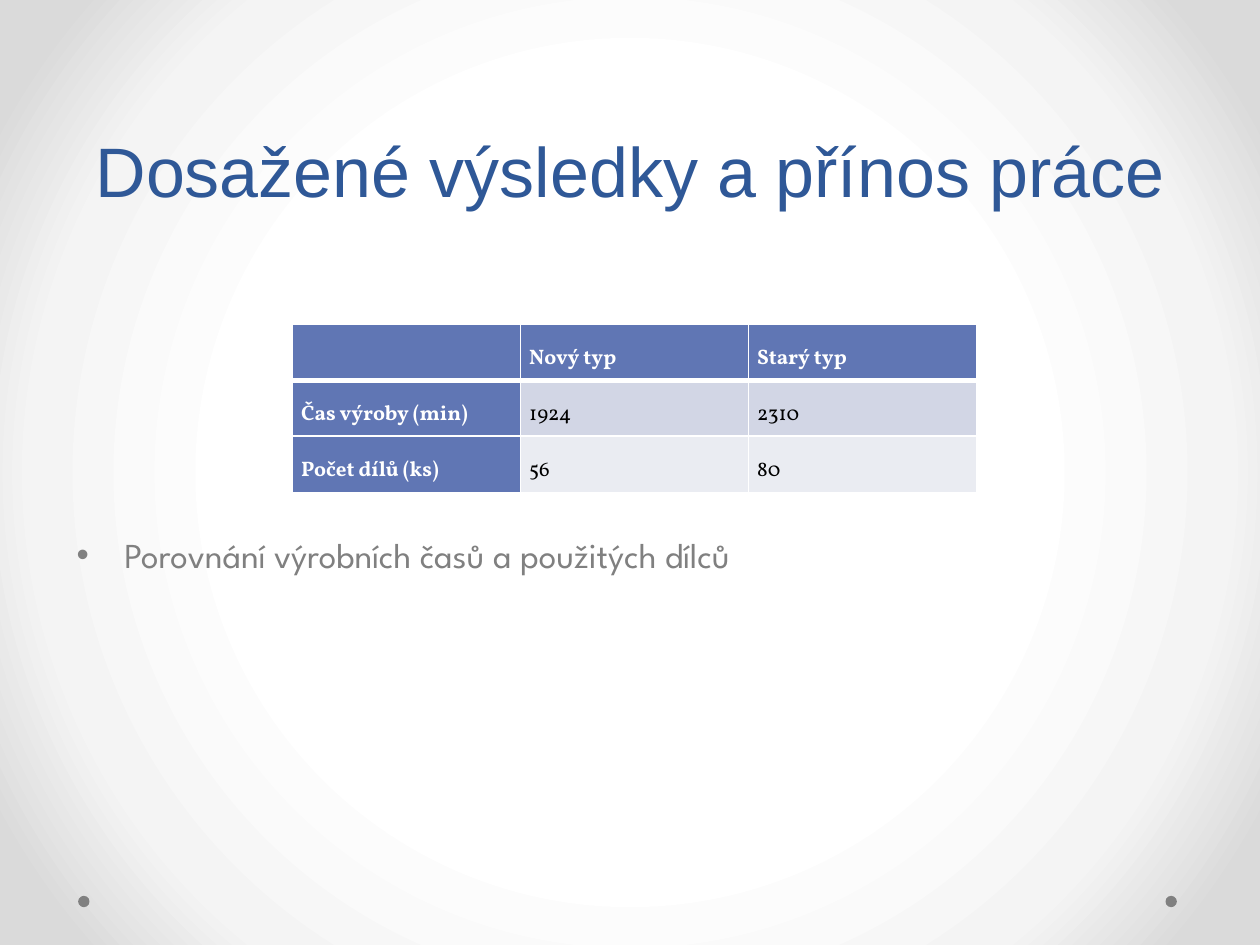
from dataclasses import dataclass

from lxml import etree
from pptx import Presentation
from pptx.dml.color import RGBColor
from pptx.enum.shapes import MSO_SHAPE
from pptx.enum.text import MSO_ANCHOR, PP_ALIGN
from pptx.oxml import parse_xml
from pptx.oxml.ns import nsdecls, qn
from pptx.util import Inches, Pt

ELLIPSE = MSO_SHAPE.OVAL
TOP, MIDDLE, BOTTOM = MSO_ANCHOR.TOP, MSO_ANCHOR.MIDDLE, MSO_ANCHOR.BOTTOM
LEFT, CENTER, JUSTIFY = PP_ALIGN.LEFT, PP_ALIGN.CENTER, PP_ALIGN.JUSTIFY
WIDTH, HEIGHT = 10, 7.5


@dataclass(frozen=True)
class Theme:
    """Colours, fonts and type sizes of the slide."""
    title: str = "2F5897"
    accent: str = "6076B4"
    bands: tuple = ("D2D6E5", "EAECF2")
    white: str = "FFFFFF"
    black: str = "000000"
    grey: str = "808080"
    backdrop: tuple = ((50, "FFFFFF"), (76, "F4F4F4"), (92, "DADADA"))
    title_font: str = "Arial"
    body_font: str = "League Spartan"
    table_font: str = "Vollkorn"
    title_size: int = 40
    body_size: int = 20
    table_size: int = 12


THEME = Theme()
ROWS = (
    ("", "Nový typ", "Starý typ"),
    ("Čas výroby (min)", "1924", "2310"),
    ("Počet dílů (ks)", "56", "80"),
)


def share(left, top, width, height):
    """Turn shares of the slide into a box of lengths."""
    return (Inches(left * WIDTH), Inches(top * HEIGHT),
            Inches(width * WIDTH), Inches(height * HEIGHT))


def write(para, text, *, font, size, color, bold=False, align=LEFT, spacing=None):
    """Put formatted text into a paragraph."""
    para.alignment = align
    para.line_spacing = spacing
    span = para.add_run()
    span.text = text
    span.font.name, span.font.size, span.font.bold = font, Pt(size), bold
    span.font.color.rgb = RGBColor.from_string(color)


def paint_backdrop(page):
    """Fill the page with a gradient that spreads from its centre."""
    page.background.fill.gradient()
    gradient = next(page.element.iter(qn("a:gradFill")))
    for child in list(gradient):
        gradient.remove(child)
    stops = etree.SubElement(gradient, qn("a:gsLst"))
    for position, color in THEME.backdrop:
        stop = etree.SubElement(stops, qn("a:gs"), pos=str(position * 1000))
        etree.SubElement(stop, qn("a:srgbClr"), val=color)
    circle = etree.SubElement(gradient, qn("a:path"), path="circle")
    etree.SubElement(circle, qn("a:fillToRect"),
                     {side: "50000" for side in "ltrb"})


def place_dots(page, box):
    """Put a round dot at each end of the box."""
    left, top, width, size = box
    for start in (left, left + width - size):
        dot = page.shapes.add_shape(ELLIPSE, start, top, size, size)
        dot.shadow.inherit = False
        dot.fill.solid()
        dot.fill.fore_color.rgb = RGBColor.from_string(THEME.grey)
        dot.line.fill.background()


def place_title(page, box):
    """Place the title at the bottom of its box."""
    title = page.shapes.title
    title.left, title.top, title.width, title.height = box
    frame = title.text_frame
    frame.word_wrap = True
    frame.vertical_anchor = BOTTOM
    frame.margin_bottom = Inches(0.07)
    write(frame.paragraphs[0], "Dosažené výsledky a přínos práce",
          font=THEME.title_font, size=THEME.title_size, color=THEME.title,
          align=CENTER, spacing=Pt(58))


def set_borders(cell, widths):
    """Draw white borders, with widths in points for left, right, top, bottom."""
    properties = cell._tc.get_or_add_tcPr()
    for side, width in zip("LRTB", widths):
        properties.append(parse_xml(
            f'<a:ln{side} {nsdecls("a")} w="{Pt(width)}"><a:solidFill>'
            f'<a:srgbClr val="{THEME.white}"/></a:solidFill></a:ln{side}>'))


def place_table(page, box):
    """Place the comparison table with equal columns and rows."""
    count = len(ROWS)
    table = page.shapes.add_table(count, len(ROWS[0]), *box).table
    table.horz_banding = False
    for r, texts in enumerate(ROWS):
        table.rows[r].height = box[3] // count
        for c, text in enumerate(texts):
            cell = table.cell(r, c)
            heading = r == 0 or c == 0
            set_borders(cell, (1, 1, 3 if r == 1 else 1, 3 if r == 0 else 1))
            cell.fill.solid()
            cell.fill.fore_color.rgb = RGBColor.from_string(
                THEME.accent if heading else THEME.bands[r - 1])
            cell.vertical_anchor = MIDDLE
            cell.margin_left = cell.margin_right = Inches(0.07)
            cell.margin_top = cell.margin_bottom = 0
            if text:
                write(cell.text_frame.paragraphs[0], text, font=THEME.table_font,
                      size=THEME.table_size, bold=heading, align=JUSTIFY,
                      color=THEME.white if heading else THEME.black, spacing=1.5)


def place_body(page, box):
    """Place the bulleted remark below the room kept for the table."""
    frame = page.shapes.add_textbox(*box).text_frame
    frame.word_wrap = True
    frame.vertical_anchor = TOP
    frame.margin_top = Inches(1.83)
    para = frame.paragraphs[0]
    properties = para._p.get_or_add_pPr()
    indent = Inches(0.38)
    properties.set("marL", str(indent))
    properties.set("indent", str(-indent))
    etree.SubElement(properties, qn("a:buFont"), typeface=THEME.title_font)
    etree.SubElement(properties, qn("a:buChar"), char="•")
    write(para, "Porovnání výrobních časů a použitých dílců",
          font=THEME.body_font, size=THEME.body_size, color=THEME.grey)


def main():
    """Build and save the slide."""
    deck = Presentation()
    deck.slide_width, deck.slide_height = Inches(WIDTH), Inches(HEIGHT)
    page = deck.slides.add_slide(deck.slide_layouts[5])
    paint_backdrop(page)
    place_dots(page, share(0.062, 0.948, 0.872, 0.012))
    place_table(page, share(0.232, 0.343, 0.543, 0.178))
    place_body(page, share(0.051, 0.321, 0.9, 0.66))
    place_title(page, share(0.05, 0, 0.9, 0.233))
    deck.save("out.pptx")


if __name__ == "__main__":
    main()
